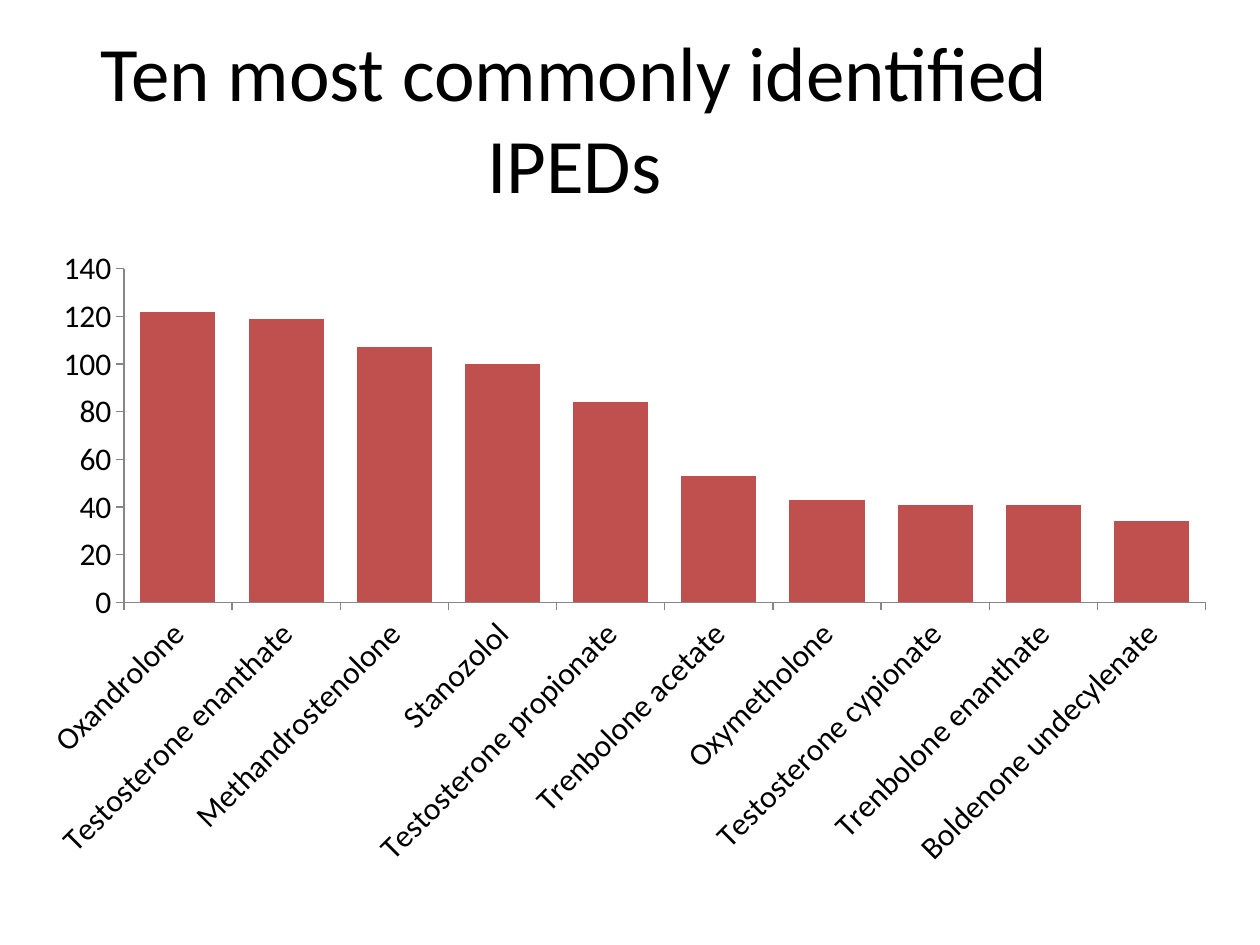
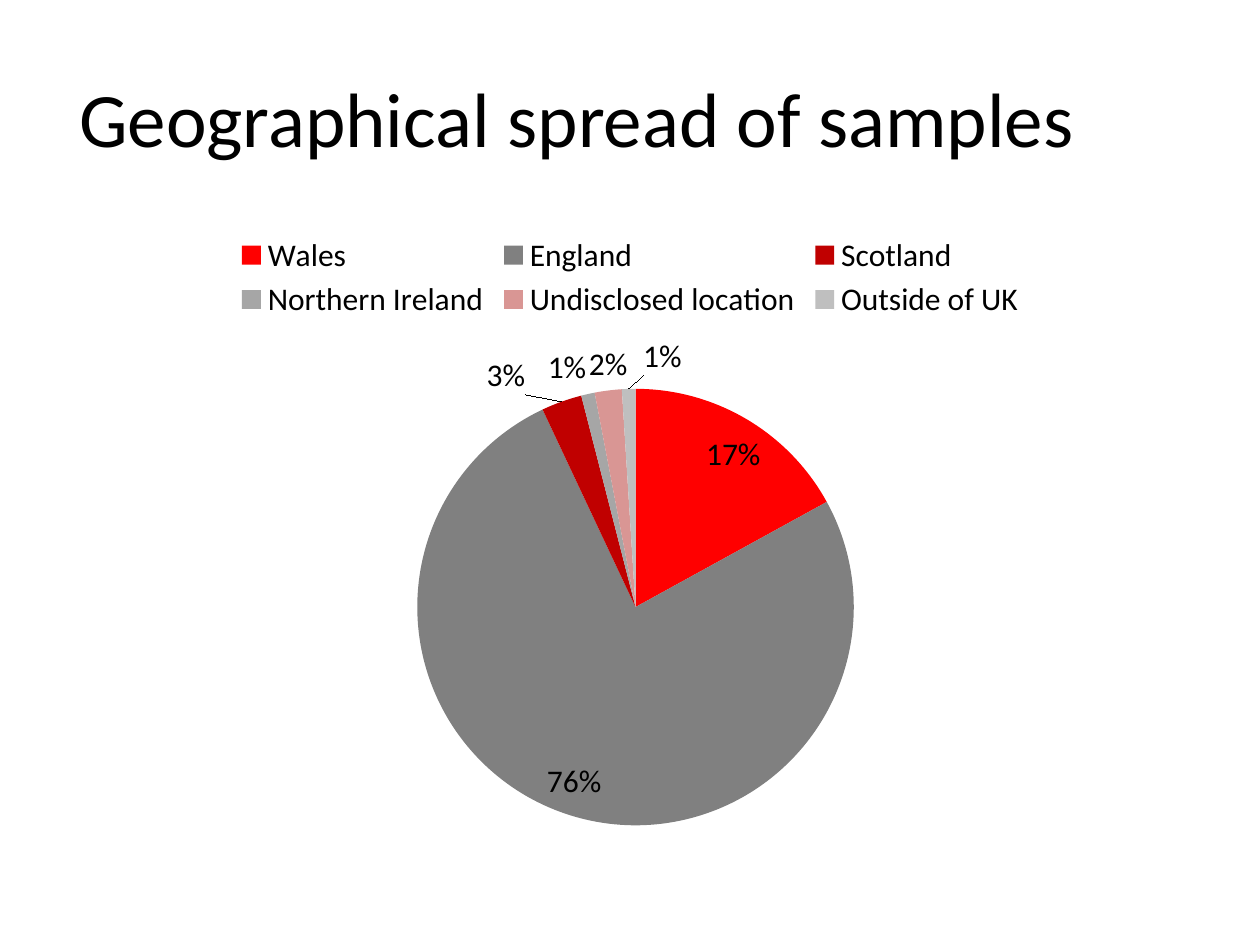
from lxml.etree import SubElement
from pptx import Presentation
from pptx.chart.data import CategoryChartData
from pptx.dml.color import RGBColor
from pptx.enum.chart import (XL_CHART_TYPE as CT, XL_LABEL_POSITION as LP,
                             XL_LEGEND_POSITION, XL_TICK_MARK)
from pptx.enum.text import MSO_ANCHOR, PP_ALIGN
from pptx.oxml.ns import qn
from pptx.util import Inches, Pt

FONT = "Calibri"
BLACK = RGBColor(0x00, 0x00, 0x00)
AXIS_GREY = RGBColor(0x86, 0x86, 0x86)
BAR_RED = RGBColor(0xC0, 0x50, 0x4D)
TITLE_SIZE, CHART_SIZE = 44, 18

IPED_TITLE = "Ten most commonly identified IPEDs"
IPEDS = [
    ("Oxandrolone", 122),
    ("Testosterone enanthate", 119),
    ("Methandrostenolone", 107),
    ("Stanozolol", 100),
    ("Testosterone propionate", 84),
    ("Trenbolone acetate", 53),
    ("Oxymetholone", 43),
    ("Testosterone cypionate", 41),
    ("Trenbolone enanthate", 41),
    ("Boldenone undecylenate", 34),
]

REGION_TITLE = "Geographical spread of samples"
REGIONS = [
    ("Wales", 17, RGBColor(0xFF, 0x00, 0x00)),
    ("England", 76, RGBColor(0x80, 0x80, 0x80)),
    ("Scotland", 3, RGBColor(0xC0, 0x00, 0x00)),
    ("Northern Ireland", 1, RGBColor(0xA6, 0xA6, 0xA6)),
    ("Undisclosed location", 2, RGBColor(0xD9, 0x96, 0x94)),
    ("Outside of UK", 1, RGBColor(0xBF, 0xBF, 0xBF)),
]
# Labels pulled away from their slice, as shares of the chart's size
LABEL_SHIFTS = {"Scotland": (-0.03, 0), "Outside of UK": (0.03, -0.01)}


def style_font(font, size):
    font.name, font.size, font.color.rgb = FONT, Pt(size), BLACK


def add_titled_slide(prs, title, width):
    s = prs.slides.add_slide(prs.slide_layouts[5])
    sp = s.shapes.title
    sp.left, sp.top, sp.width, sp.height = map(Inches, (0.5, 0.3, width, 1.25))
    tf = sp.text_frame
    tf.vertical_anchor = MSO_ANCHOR.MIDDLE
    p = tf.paragraphs[0]
    p.alignment = PP_ALIGN.CENTER
    r = p.add_run()
    r.text = title
    style_font(r.font, TITLE_SIZE)
    return s


def add_chart(s, kind, rows, box):
    data = CategoryChartData()
    data.categories = [row[0] for row in rows]
    data.add_series("Series 1", [row[1] for row in rows])
    chart = s.shapes.add_chart(kind, *map(Inches, box), data).chart
    chart.has_title = False
    style_font(chart.font, CHART_SIZE)
    return chart


def set_layout(parent, index, **values):
    """Give a chart part a manual layout, replacing any it has."""
    for old in parent.findall(qn("c:layout")):
        parent.remove(old)
    layout = SubElement(parent, qn("c:layout"))
    parent.insert(index, layout)
    manual = SubElement(layout, qn("c:manualLayout"))
    for tag, value in values.items():
        SubElement(manual, qn(f"c:{tag}")).set("val", str(value))


def place_plot(chart, x, y, w, h):
    area = chart._chartSpace.find(".//" + qn("c:plotArea"))
    set_layout(area, 0, layoutTarget="inner", xMode="edge", yMode="edge",
               x=x, y=y, w=w, h=h)


def build_ipeds(prs):
    s = add_titled_slide(prs, IPED_TITLE, 8.12)
    chart = add_chart(s, CT.COLUMN_CLUSTERED, IPEDS, (0.22, 1.88, 9.54, 5.09))
    chart.has_legend = False
    plot = chart.plots[0]
    plot.gap_width, plot.vary_by_categories = 44, False
    fill = plot.series[0].format.fill
    fill.solid()
    fill.fore_color.rgb = BAR_RED
    for axis in (chart.category_axis, chart.value_axis):
        axis.has_major_gridlines = False
        axis.major_tick_mark = XL_TICK_MARK.OUTSIDE
        axis.format.line.color.rgb = AXIS_GREY
        axis.format.line.width = Pt(0.75)
        style_font(axis.tick_labels.font, CHART_SIZE)
    scale = chart.value_axis
    scale.minimum_scale, scale.maximum_scale, scale.major_unit = 0, 140, 20
    names = chart.category_axis._element.find(".//" + qn("a:bodyPr"))
    names.set("rot", str(-45 * 60000))
    names.set("vert", "horz")
    place_plot(chart, 0.08, 0.05, 0.9, 0.52)


def build_regions(prs):
    s = add_titled_slide(prs, REGION_TITLE, 8.16)
    chart = add_chart(s, CT.PIE, REGIONS, (0.5, 1.75, 9, 4.95))
    chart.has_legend = True
    chart.legend.position = XL_LEGEND_POSITION.TOP
    chart.legend.include_in_layout = False
    style_font(chart.legend.font, CHART_SIZE)
    plot = chart.plots[0]
    plot.vary_by_categories = True
    series = plot.series[0]
    labels = series.data_labels
    labels.show_percentage, labels.show_value = True, False
    labels.number_format, labels.number_format_is_linked = "0%", False
    labels.position = LP.BEST_FIT
    style_font(labels.font, CHART_SIZE)
    for i, (name, _, color) in enumerate(REGIONS):
        point = series.points[i]
        point.format.fill.solid()
        point.format.fill.fore_color.rgb = color
        if name in LABEL_SHIFTS:
            style_font(point.data_label.font, CHART_SIZE)
            point.data_label.position = LP.BEST_FIT
    shifts = [LABEL_SHIFTS[row[0]] for row in REGIONS if row[0] in LABEL_SHIFTS]
    for label, (x, y) in zip(labels._element.findall(qn("c:dLbl")), shifts):
        set_layout(label, 1, x=x, y=y)
        label.find(qn("c:showVal")).set("val", "0")
        label.find(qn("c:showPercent")).set("val", "1")
    place_plot(chart, 0.31, 0.27, 0.39, 0.7)


def main():
    prs = Presentation()
    prs.slide_width, prs.slide_height = Inches(10), Inches(7.5)
    build_ipeds(prs)
    build_regions(prs)
    prs.save("out.pptx")


if __name__ == "__main__":
    main()
